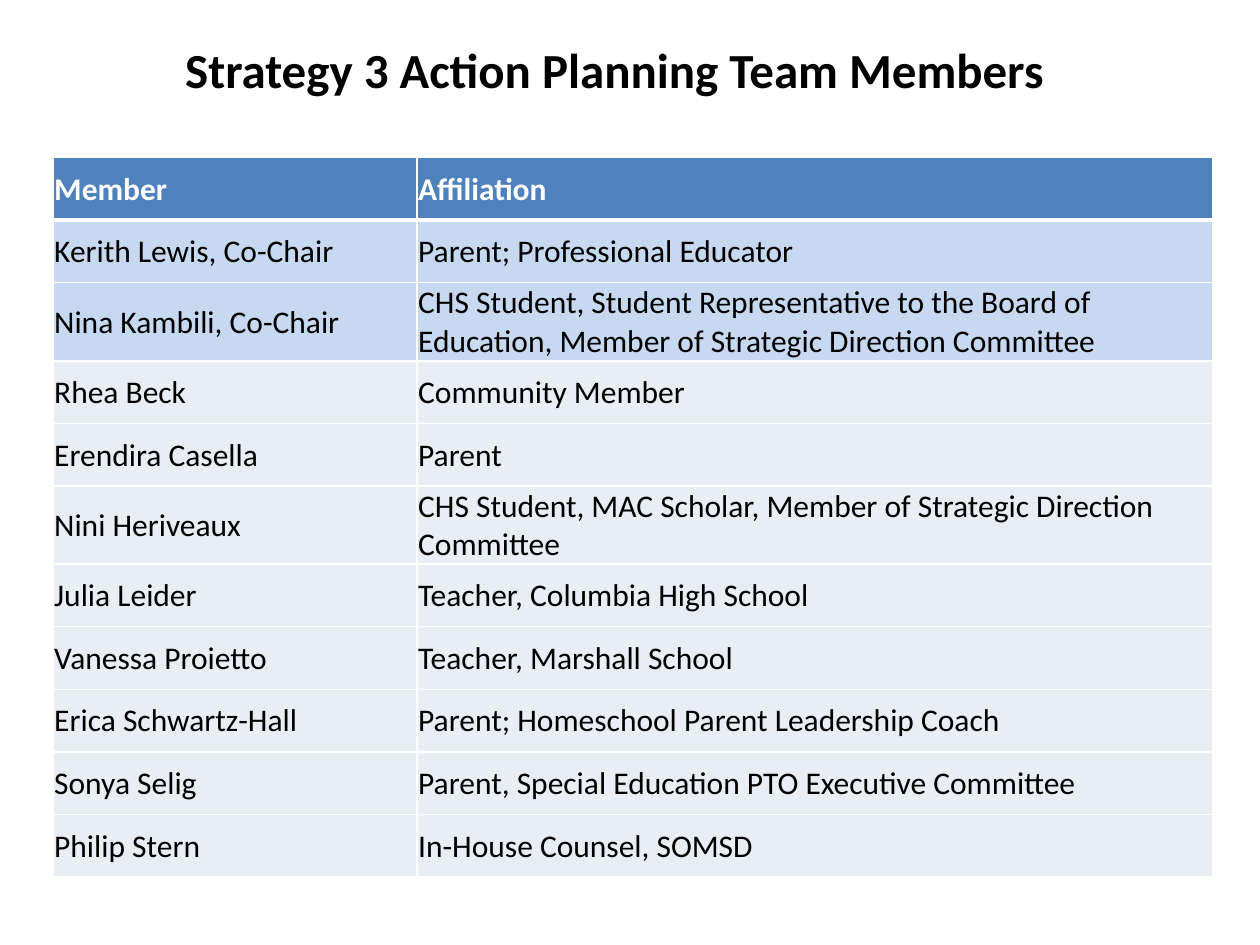
from pptx import Presentation
from pptx.dml.color import RGBColor
from pptx.enum.text import MSO_ANCHOR, PP_ALIGN
from pptx.oxml.ns import qn
from pptx.util import Pt
from lxml import etree

MIDDLE = MSO_ANCHOR.MIDDLE
LEFT, CENTER = PP_ALIGN.LEFT, PP_ALIGN.CENTER

BLACK = RGBColor(0x00, 0x00, 0x00)
WHITE = RGBColor(0xFF, 0xFF, 0xFF)
BLUE = RGBColor(0x4F, 0x81, 0xBD)
SKY = RGBColor(0xC6, 0xD9, 0xF1)
PALE = RGBColor(0xE9, 0xED, 0xF4)

FONT = "Calibri"
WIDTHS = (208, 455)
ROW_H = 35.75
INSET = Pt(0.75)
THIN, THICK = 1, 3
CHAIRS = 2

TITLE = "Strategy 3 Action Planning Team Members"
HEADER = ("Member", "Affiliation")
MEMBERS = [
    ("Kerith Lewis, Co-Chair", "Parent; Professional Educator"),
    ("Nina Kambili, Co-Chair",
     "CHS Student, Student Representative to the Board of Education, "
     "Member of Strategic Direction Committee"),
    ("Rhea Beck", "Community Member"),
    ("Erendira Casella", "Parent"),
    ("Nini Heriveaux",
     "CHS Student, MAC Scholar, Member of Strategic Direction Committee"),
    ("Julia Leider", "Teacher, Columbia High School"),
    ("Vanessa Proietto", "Teacher, Marshall School"),
    ("Erica Schwartz-Hall", "Parent; Homeschool Parent Leadership Coach"),
    ("Sonya Selig", "Parent, Special Education PTO Executive Committee"),
    ("Philip Stern", "In-House Counsel, SOMSD"),
]


def write(frame, text, size=18, color=BLACK, bold=False, align=LEFT):
    frame.text = text
    para = frame.paragraphs[0]
    para.alignment = align
    font = para.runs[0].font
    font.name, font.size, font.bold = FONT, Pt(size), bold
    font.color.rgb = color


def add_title(slide):
    title = slide.shapes.title
    title.left, title.top = Pt(54), Pt(19)
    title.width, title.height = Pt(594), Pt(41)
    title.text_frame.vertical_anchor = MIDDLE
    title.text_frame.word_wrap = True
    write(title.text_frame, TITLE, size=28, bold=True, align=CENTER)


def set_edges(cell, top, bottom):
    """Draw white cell borders; call before the fill, which must follow them."""
    props = cell._tc.get_or_add_tcPr()
    edges = (("lnL", THIN), ("lnR", THIN), ("lnT", top), ("lnB", bottom))
    for tag, width in edges:
        line = etree.SubElement(props, qn(f"a:{tag}"), w=str(Pt(width)))
        fill = etree.SubElement(line, qn("a:solidFill"))
        etree.SubElement(fill, qn("a:srgbClr"), val=str(WHITE))


def fill_cell(cell, text, fill, top=THIN, bottom=THIN, **style):
    cell.margin_left = cell.margin_right = cell.margin_top = INSET
    cell.margin_bottom = 0
    cell.vertical_anchor = MIDDLE
    set_edges(cell, top, bottom)
    cell.fill.solid()
    cell.fill.fore_color.rgb = fill
    write(cell.text_frame, text, **style)


def add_members(slide):
    count = len(MEMBERS) + 1
    table = slide.shapes.add_table(
        count, len(WIDTHS), Pt(30.25), Pt(90),
        Pt(sum(WIDTHS)), Pt(ROW_H * count)).table
    for column, width in zip(table.columns, WIDTHS):
        column.width = Pt(width)
    for row in table.rows:
        row.height = Pt(ROW_H)
    for col, text in enumerate(HEADER):
        fill_cell(table.cell(0, col), text, BLUE, bottom=THICK,
                  color=WHITE, bold=True)
    for row, member in enumerate(MEMBERS, 1):
        fill = SKY if row <= CHAIRS else PALE
        top = THICK if row == 1 else THIN
        for col, text in enumerate(member):
            fill_cell(table.cell(row, col), text, fill, top=top)


def main():
    deck = Presentation()
    deck.slide_width, deck.slide_height = Pt(720), Pt(540)
    slide = deck.slides.add_slide(deck.slide_layouts[5])
    add_title(slide)
    add_members(slide)
    deck.save("out.pptx")


if __name__ == "__main__":
    main()
